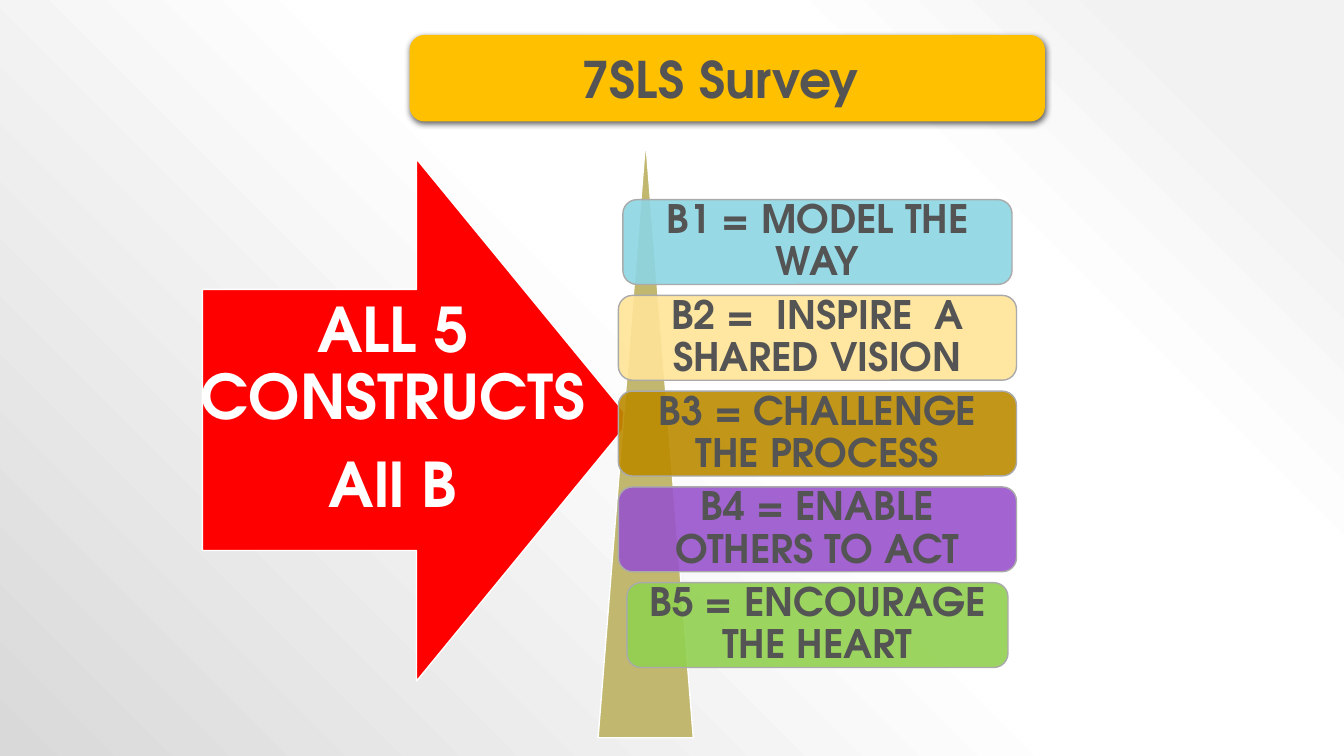
from pptx import Presentation
from pptx.dml.color import RGBColor
from pptx.enum.shapes import MSO_SHAPE as SHAPE
from pptx.enum.text import MSO_ANCHOR as ANCHOR, PP_ALIGN as ALIGN
from pptx.oxml import parse_xml
from pptx.oxml.ns import nsdecls, qn
from pptx.util import Pt

FONT = "TeX Gyre Adventor"
GREY = RGBColor(0x54, 0x54, 0x54)
WHITE = RGBColor(0xFF, 0xFF, 0xFF)
BORDER = RGBColor(0xAA, 0xAA, 0xAA)
AMBER = RGBColor(0xFF, 0xC0, 0x00)
RED = RGBColor(0xFF, 0x00, 0x00)
KHAKI = RGBColor(0xC1, 0xB7, 0x6F)
AQUA = RGBColor(0x8C, 0xD6, 0xE4)
CREAM = RGBColor(0xFF, 0xE4, 0x97)
OCHRE = RGBColor(0xBB, 0x8B, 0x00)
PURPLE = RGBColor(0x99, 0x54, 0xCC)
GREEN = RGBColor(0x92, 0xD0, 0x50)

BACKDROP = [(10, "F2F2F2"), (28, "FFFFFF"), (48, "FFFFFF"), (100, "D9D9D9")]
CONSTRUCTS = [
    ("B1 = MODEL THE WAY", AQUA, 278),
    ("B2 =  INSPIRE  A SHARED VISION", CREAM, 284.4),
    ("B3 = CHALLENGE THE PROCESS", OCHRE, 284.4),
    ("B4 = ENABLE OTHERS TO ACT", PURPLE, 284.4),
    ("B5 = ENCOURAGE THE HEART", GREEN, 272.2),
]
BAR_CENTER, BAR_TOP, BAR_PITCH, BAR_HEIGHT = 583.9, 142.6, 68.4, 60.6


def set_backdrop(s):
    stops = "".join(
        f'<a:gs pos="{pos * 1000}"><a:srgbClr val="{color}"/></a:gs>'
        for pos, color in BACKDROP)
    s.element.cSld.insert(0, parse_xml(
        f'<p:bg {nsdecls("p", "a")}><p:bgPr><a:gradFill rotWithShape="1">'
        f'<a:gsLst>{stops}</a:gsLst><a:path path="circle">'
        '<a:fillToRect l="100000" b="100000"/></a:path></a:gradFill>'
        '<a:effectLst/></p:bgPr></p:bg>'))


def add_block(s, kind, x, y, w, h, fill, line, line_width=1, alpha=100):
    sp = s.shapes.add_shape(kind, Pt(x), Pt(y), Pt(w), Pt(h))
    sp.shadow.inherit = False
    sp.fill.solid()
    sp.fill.fore_color.rgb = fill
    sp.line.color.rgb = line
    sp.line.width = Pt(line_width)
    if alpha < 100:
        color = sp._element.spPr.find(qn("a:solidFill"))[0]
        color.append(parse_xml(
            f'<a:alpha {nsdecls("a")} val="{alpha * 1000}"/>'))
    return sp


def add_drop_shadow(sp):
    sp._element.spPr.find(qn("a:effectLst")).append(parse_xml(
        f'<a:outerShdw {nsdecls("a")} blurRad="{Pt(4.5)}" dist="{Pt(1.5)}" '
        'dir="5400000" algn="ctr" rotWithShape="0"><a:srgbClr val="000000">'
        '<a:alpha val="63000"/></a:srgbClr></a:outerShdw>'))


def write_text(sp, text, size=28, color=GREY, spacing=0.9, after=0, inset=11.5):
    tf = sp.text_frame
    tf.word_wrap = True
    tf.vertical_anchor = ANCHOR.MIDDLE
    tf.margin_left = tf.margin_right = Pt(inset)
    tf.margin_top = tf.margin_bottom = 0
    for i, line in enumerate(text.split("\n")):
        p = tf.add_paragraph() if i else tf.paragraphs[0]
        p.alignment = ALIGN.CENTER
        p.line_spacing = spacing
        p.space_after = Pt(after)
        r = p.add_run()
        r.text = line
        r.font.name = FONT
        r.font.size = Pt(size)
        r.font.bold = True
        r.font.color.rgb = color


def add_title(s):
    sp = add_block(s, SHAPE.ROUNDED_RECTANGLE, 293, 25.4, 453, 61,
                   AMBER, AMBER, 0.75)
    add_drop_shadow(sp)
    write_text(sp, "7SLS Survey ", size=36, spacing=1.0)


def add_arrow(s):
    add_block(s, SHAPE.RIGHT_ARROW, 144.5, 113.5, 306, 373, RED, WHITE)
    label = s.shapes.add_textbox(Pt(128.9), Pt(214), Pt(303.8), Pt(158))
    write_text(label, "ALL 5 CONSTRUCTS\nAll B", size=44, color=WHITE,
               after=15.4, inset=13)


def add_constructs(s):
    add_block(s, SHAPE.ISOSCELES_TRIANGLE, 427.2, 100, 68, 427, KHAKI, WHITE)
    for i, (text, fill, width) in enumerate(CONSTRUCTS):
        bar = add_block(s, SHAPE.ROUNDED_RECTANGLE, BAR_CENTER - width / 2,
                        BAR_TOP + i * BAR_PITCH, width, BAR_HEIGHT,
                        fill, BORDER, alpha=90)
        write_text(bar, text)


def main():
    prs = Presentation()
    prs.slide_width, prs.slide_height = Pt(960), Pt(540)
    s = prs.slides.add_slide(prs.slide_layouts[6])
    set_backdrop(s)
    add_title(s)
    add_arrow(s)
    add_constructs(s)
    prs.save("out.pptx")


if __name__ == "__main__":
    main()
